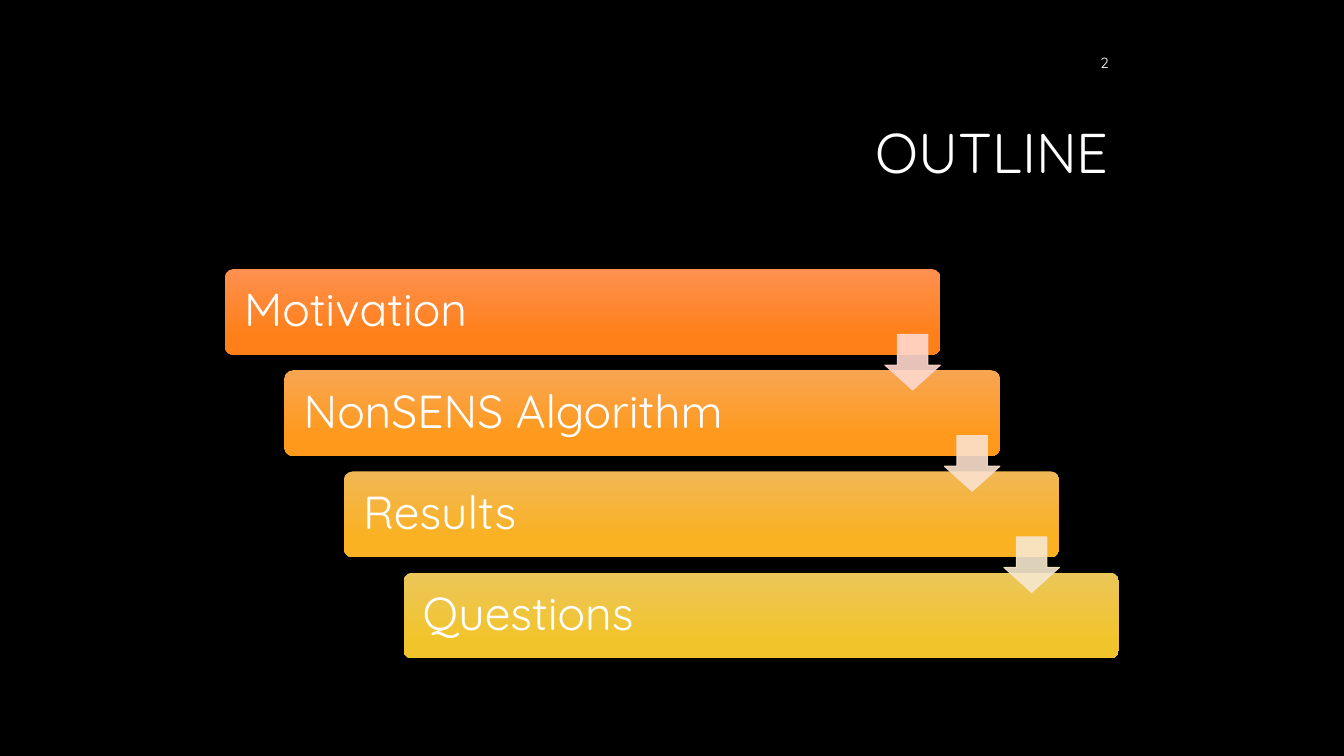
from lxml.etree import SubElement as Sub
from pptx import Presentation
from pptx.dml.color import RGBColor
from pptx.enum.shapes import MSO_SHAPE as Kind
from pptx.enum.text import MSO_ANCHOR as Anchor, PP_ALIGN as Align
from pptx.oxml.ns import qn
from pptx.util import Cm, Pt

WHITE = "FFFFFF"
STEPS = [
    ("Motivation", "FE904F", "FF8019"),
    ("NonSENS Algorithm", "F8A552", "FF991B"),
    ("Results", "F1B755", "FAB122"),
    ("Questions", "EBC659", "F2C42C"),
]
ARROWS = ["FFD8CD", "FBE1CD", "F7E8CE"]
SHIFT, DROP = 1.5, 2.55


def color(code):
    return RGBColor.from_string(code)


def apply(item, values):
    for name, value in values.items():
        setattr(item, name, value)


def write(shape, text, size, frame, para):
    box = shape.text_frame
    apply(box, {"word_wrap": True, "vertical_anchor": Anchor.MIDDLE, **frame})
    line = box.paragraphs[0]
    apply(line, para)
    run = line.add_run()
    run.text = text
    apply(run.font, {"name": "Quicksand", "size": Pt(size)})
    run.font.color.rgb = color(WHITE)


def label(slide, text, size, area, para):
    box = slide.shapes.add_textbox(*map(Cm, area))
    write(box, text, size, {}, {"alignment": Align.RIGHT, **para})


def shape(slide, kind, area, ratios):
    item = slide.shapes.add_shape(kind, *map(Cm, area))
    item.shadow.inherit = False
    for index, ratio in enumerate(ratios):
        item.adjustments[index] = ratio
    return item


def bar(slide, row, text, light, deep):
    area = (5.67 + row * SHIFT, 6.78 + row * DROP, 18.03, 2.16)
    item = shape(slide, Kind.ROUNDED_RECTANGLE, area, [0.1])
    item.line.fill.background()
    item.fill.gradient()
    item.fill.gradient_angle = 270
    for stop, spot, code in zip(item.fill.gradient_stops, (0, 0.78), (light, deep)):
        stop.position = spot
        stop.color.rgb = color(code)
    frame = {"margin_left": Cm(0.42), "margin_right": Cm(0.42)}
    write(item, text, 33, frame, {"alignment": Align.LEFT, "line_spacing": 0.9})


def arrow(slide, row, code):
    area = (22.3 + row * SHIFT, 8.43 + row * DROP, 1.4, 1.4)
    item = shape(slide, Kind.DOWN_ARROW, area, [0.55, 0.45])
    item.line.width = Pt(0.75)
    for fill in (item.fill, item.line.fill):
        fill.solid()
        fill.fore_color.rgb = color(code)
    for tint in item.element.spPr.iter(qn("a:srgbClr")):
        Sub(tint, qn("a:alpha"), val="90000")


def main():
    deck = Presentation()
    apply(deck, {"slide_width": Cm(33.87), "slide_height": Cm(19.05)})
    slide = deck.slides.add_slide(deck.slide_layouts[6])
    slide.background.fill.solid()
    slide.background.fill.fore_color.rgb = color("000000")
    label(slide, "OUTLINE", 40, (10.26, 2.13, 17.93, 3.58), {"line_spacing": 0.9})
    for row, step in enumerate(STEPS):
        bar(slide, row, *step)
    for row, code in enumerate(ARROWS):
        arrow(slide, row, code)
    label(slide, "2", 10.5, (22.48, 1.07, 5.71, 1.02), {"space_after": Pt(6)})
    deck.save("out.pptx")


if __name__ == "__main__":
    main()
